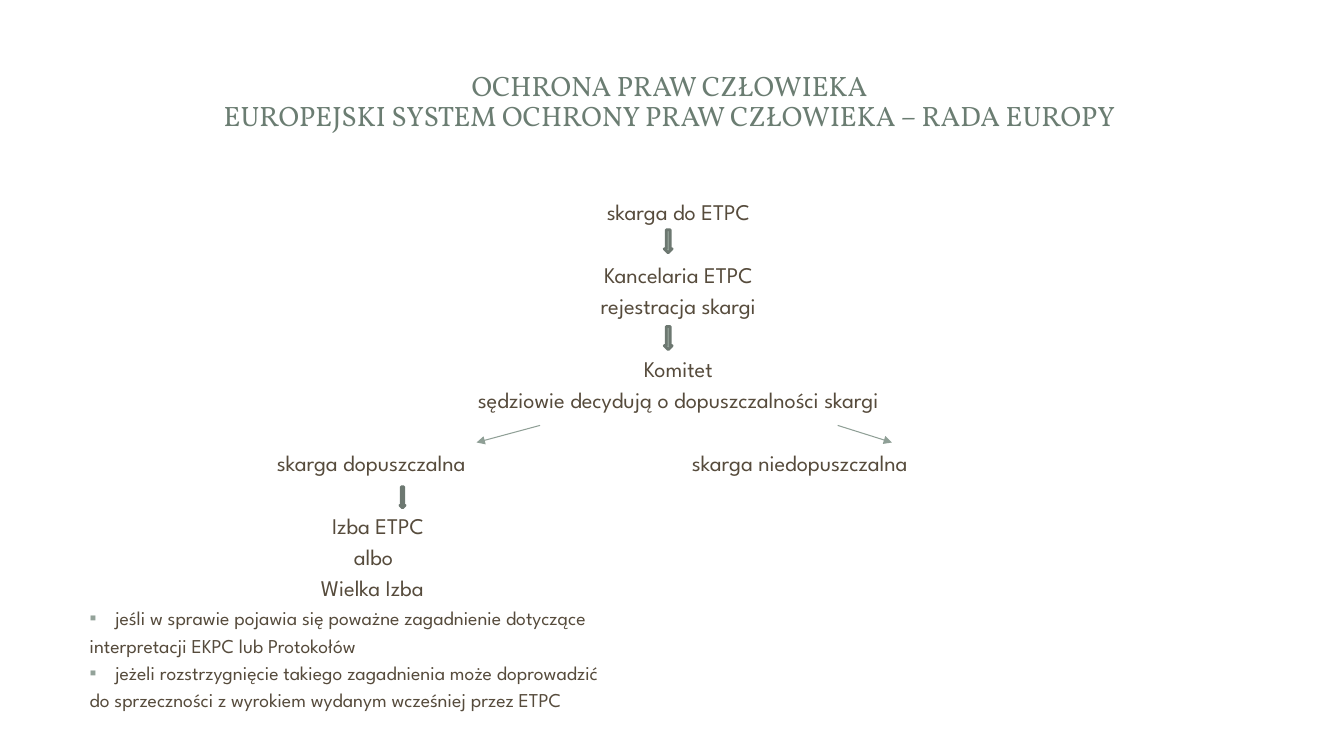
import pptx
import pptx.dml.color
import pptx.enum.shapes
import pptx.enum.text
import pptx.oxml.xmlchemy
import pptx.util
from pptx.util import Cm

COLORS = {
    "title": "6B7D72",
    "text": "564B3C",
    "bullet": "93A299",
    "arrow": "93A299",
    "arrow_edge": "6D7871",
    "branch": "8F9F96",
}
TITLE_FONT = "Vollkorn"
BODY_FONT = "League Spartan"
ROW_HEIGHT = 0.79
ALIGN = pptx.enum.text.PP_ALIGN
ANCHOR = pptx.enum.text.MSO_ANCHOR

CENTRED_STEPS = [
    (0, ["skarga do ETPC"]),
    (2, ["Kancelaria ETPC", "rejestracja skargi"]),
    (5, ["Komitet", "sędziowie decydują o dopuszczalności skargi"]),
]
# row, distance from the left edge of the chart, text
BRANCH_STEPS = [
    (8, 4.72, "skarga dopuszczalna"),
    (8, 15.18, "skarga niedopuszczalna"),
    (10, 6.11, "Izba ETPC"),
    (11, 6.66, "albo"),
    (12, 5.83, "Wielka Izba"),
]
# left, top, width, height within the chart
BLOCK_ARROWS = [
    (14.48, 0.79, 0.2, 0.58),
    (14.48, 3.23, 0.2, 0.58),
    (7.82, 7.27, 0.13, 0.53),
]
# start x, end x within the chart
BRANCH_ARROWS = [(11.35, 9.75), (18.85, 20.22)]
NOTES = [
    ("jeśli w sprawie pojawia się poważne zagadnienie dotyczące", True),
    ("interpretacji EKPC lub Protokołów", False),
    ("jeżeli rozstrzygnięcie takiego zagadnienia może doprowadzić", True),
    ("do sprzeczności z wyrokiem wydanym wcześniej przez ETPC", False),
]


def rgb(name):
    return pptx.dml.color.RGBColor.from_string(COLORS[name])


def add_child(parent, tag, **attributes):
    child = pptx.oxml.xmlchemy.OxmlElement(tag)
    for key, value in attributes.items():
        child.set(key, value)
    parent.append(child)
    return child


def add_text(page, lines, left, top, width, height, size=16, font=BODY_FONT,
             color="text", align=ALIGN.LEFT, anchor=ANCHOR.TOP, spacing=None):
    """Place one paragraph per line and return the paragraphs."""
    box = page.shapes.add_textbox(Cm(left), Cm(top), Cm(width), Cm(height))
    frame = box.text_frame
    frame.word_wrap = True
    frame.vertical_anchor = anchor
    frame.margin_left = frame.margin_right = 0
    frame.margin_top = frame.margin_bottom = 0
    for number, line in enumerate(lines):
        para = frame.add_paragraph() if number else frame.paragraphs[0]
        para.text = line
        para.alignment = align
        para.line_spacing = spacing
        if number:
            para.space_before = pptx.util.Pt(size * 0.2)
        for span in para.runs:
            span.font.size = pptx.util.Pt(size)
            span.font.name = font
            span.font.color.rgb = rgb(color)
    return frame.paragraphs


def add_bullet(para):
    properties = para._p.get_or_add_pPr()
    properties.set("marL", str(Cm(0.64)))
    properties.set("indent", str(-Cm(0.64)))
    add_child(add_child(properties, "a:buClr"), "a:srgbClr", val=COLORS["bullet"])
    add_child(properties, "a:buFont", typeface="Arial")
    add_child(properties, "a:buChar", char="▪")


def add_block_arrow(page, left, top, width, height):
    arrow = page.shapes.add_shape(pptx.enum.shapes.MSO_SHAPE.DOWN_ARROW,
                                  Cm(left), Cm(top), Cm(width), Cm(height))
    arrow.shadow.inherit = False
    arrow.fill.solid()
    arrow.fill.fore_color.rgb = rgb("arrow")
    arrow.line.color.rgb = rgb("arrow_edge")
    arrow.line.width = pptx.util.Pt(2)


def add_branch_arrow(page, start_x, start_y, end_x, end_y):
    arrow = page.shapes.add_connector(pptx.enum.shapes.MSO_CONNECTOR.STRAIGHT,
                                      Cm(start_x), Cm(start_y), Cm(end_x), Cm(end_y))
    arrow.line.color.rgb = rgb("branch")
    arrow.line.width = pptx.util.Pt(0.75)
    add_child(arrow.line._get_or_add_ln(), "a:tailEnd", type="triangle")
    add_child(arrow._element.spPr, "a:effectLst")


def draw_title(page, left, top, width, height):
    title = ("OCHRONA PRAW CZŁOWIEKA\v"
             "EUROPEJSKI SYSTEM OCHRONY PRAW CZŁOWIEKA – RADA EUROPY")
    add_text(page, [title], left, top, width, height, size=20, font=TITLE_FONT,
             color="title", align=ALIGN.CENTER, anchor=ANCHOR.MIDDLE, spacing=0.87)


def draw_procedure(page, left, top, width):
    """Draw the path of a complaint on a grid of equal text rows."""
    for row, lines in CENTRED_STEPS:
        add_text(page, lines, left, top + row * ROW_HEIGHT, width,
                 len(lines) * ROW_HEIGHT, align=ALIGN.CENTER)
    for row, offset, text in BRANCH_STEPS:
        add_text(page, [text], left + offset, top + row * ROW_HEIGHT, 7, ROW_HEIGHT)
    for x, y, arrow_width, arrow_height in BLOCK_ARROWS:
        add_block_arrow(page, left + x, top + y, arrow_width, arrow_height)
    for start_x, end_x in BRANCH_ARROWS:
        add_branch_arrow(page, left + start_x, top + 5.72, left + end_x, top + 6.15)


def draw_notes(page, left, top, width, height):
    paras = add_text(page, [text for text, _ in NOTES], left, top, width, height, size=14)
    for para, (_, bulleted) in zip(paras, NOTES):
        if bulleted:
            add_bullet(para)


def main():
    deck = pptx.Presentation()
    deck.slide_width, deck.slide_height = Cm(33.87), Cm(19.05)
    page = deck.slides.add_slide(deck.slide_layouts[6])
    draw_title(page, 1.57, 1.14, 30.61, 2.9)
    draw_procedure(page, 2.26, 5, 29.67)
    draw_notes(page, 2.26, 5 + 13 * ROW_HEIGHT, 15, 2.8)
    deck.save("out.pptx")


if __name__ == "__main__":
    main()
